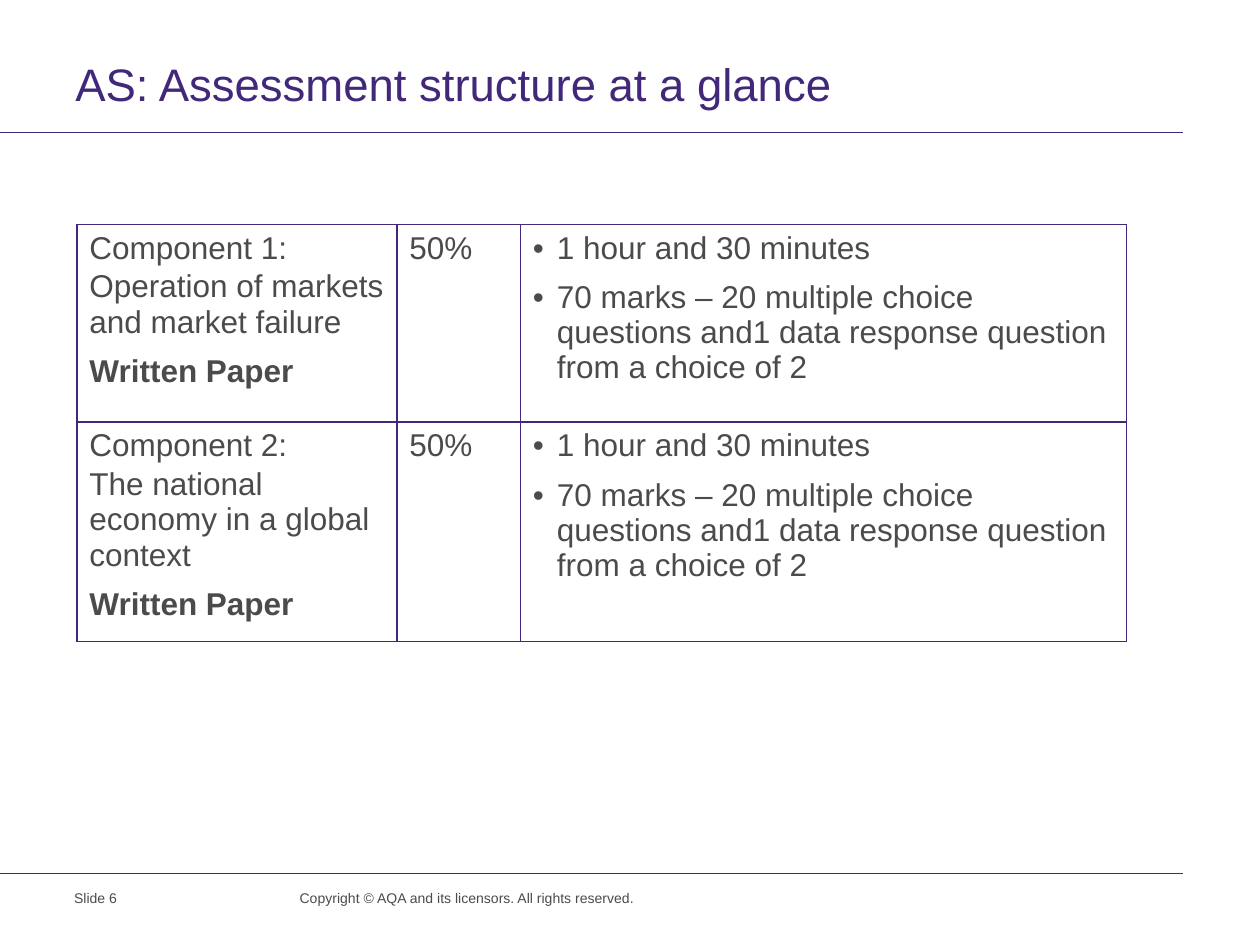
from dataclasses import dataclass
from lxml.etree import SubElement
from pptx import Presentation
from pptx.dml.color import RGBColor
from pptx.enum.shapes import MSO_CONNECTOR
from pptx.oxml import parse_xml
from pptx.oxml.ns import nsdecls, qn
from pptx.util import Inches, Pt


@dataclass(frozen=True)
class Theme:
    font: str = "Arial"
    purple: str = "412878"
    grey: str = "4B4B4B"
    title: int = 26
    title_leading: int = 28
    body: int = 18
    footer: int = 8
    rule: float = 0.6
    border: float = 1
    space_before: int = 2
    space_after: int = 6


THEME = Theme()

TITLE = "AS: Assessment structure at a glance"
FOOTERS = [  # text, left, width
    ("Slide 6", 0.49, 1.56),
    ("Copyright © AQA and its licensors. All rights reserved.", 2.28, 2.93),
]
COMPONENTS = [  # name, topic, weight
    ("Component 1:", "Operation of markets and market failure", "50%"),
    ("Component 2:", "The national economy in a global context", "50%"),
]
PAPER = "Written Paper"
EXAM_FORMAT = [
    "1 hour and 30 minutes",
    "70 marks – 20 multiple choice questions and1 data response question "
    "from a choice of 2",
]
RULE_TOPS, RULE_END = (1.05, 6.93), 9.39
FOOTER_TOP, FOOTER_HEIGHT = 7.01, 0.26
TABLE_LEFT, TABLE_TOP = 0.61, 1.78
COLUMN_WIDTHS, ROW_HEIGHT = (2.54, 0.98, 4.81), 1.57
BULLET_INDENT = 0.19


def add_run(p, text, size, color, bold=False):
    r = p.add_run()
    r.text = text
    font = r.font
    font.name, font.size, font.bold = THEME.font, Pt(size), bold
    font.color.rgb = RGBColor.from_string(color)


def add_text(slide, text, box, size, color):
    tf = slide.shapes.add_textbox(*map(Inches, box)).text_frame
    tf.word_wrap = True
    add_run(tf.paragraphs[0], text, size, color)
    return tf


def add_rule(slide, top):
    line = slide.shapes.add_connector(
        MSO_CONNECTOR.STRAIGHT, 0, Inches(top), Inches(RULE_END), Inches(top))
    line.line.color.rgb = RGBColor.from_string(THEME.purple)
    line.line.width = Pt(THEME.rule)
    SubElement(line._element.spPr, qn("a:effectLst"))


def add_bullet(p):
    pPr = p._p.get_or_add_pPr()
    pPr.set("marL", str(Inches(BULLET_INDENT)))
    pPr.set("indent", str(-Inches(BULLET_INDENT)))
    SubElement(pPr, qn("a:buFont"), typeface=THEME.font)
    SubElement(pPr, qn("a:buChar"), char="•")


def style_cell(cell):
    cell.fill.background()
    tcPr = cell._tc.get_or_add_tcPr()
    for i, side in enumerate("LRTB"):
        tcPr.insert(i, parse_xml(
            f'<a:ln{side} {nsdecls("a")} w="{Pt(THEME.border)}"><a:solidFill>'
            f'<a:srgbClr val="{THEME.purple}"/></a:solidFill></a:ln{side}>'))


def fill_cell(cell, lines, gap_after, bold=None, bullets=False):
    """Write one paragraph per line; gap_after and bold are line indexes."""
    style_cell(cell)
    tf = cell.text_frame
    for i, text in enumerate(lines):
        p = tf.add_paragraph() if i else tf.paragraphs[0]
        if bullets:
            add_bullet(p)
        if i:
            p.space_before = Pt(THEME.space_before)
        if i == gap_after:
            p.space_after = Pt(THEME.space_after)
        add_run(p, text, THEME.body, THEME.grey, i == bold)


def add_components_table(slide):
    table = slide.shapes.add_table(
        len(COMPONENTS), len(COLUMN_WIDTHS), Inches(TABLE_LEFT), Inches(TABLE_TOP),
        Inches(sum(COLUMN_WIDTHS)), Inches(ROW_HEIGHT * len(COMPONENTS))).table
    table.first_row = table.horz_banding = False
    for column, width in zip(table.columns, COLUMN_WIDTHS):
        column.width = Inches(width)
    for row, (name, topic, weight) in zip(table.rows, COMPONENTS):
        component, share, exam = row.cells
        fill_cell(component, [name, topic, PAPER], gap_after=1, bold=2)
        fill_cell(share, [weight], gap_after=None)
        fill_cell(exam, EXAM_FORMAT, gap_after=0, bullets=True)


def main():
    prs = Presentation()
    prs.slide_width, prs.slide_height = Inches(10), Inches(7.5)
    slide = prs.slides.add_slide(prs.slide_layouts[6])
    for top in RULE_TOPS:
        add_rule(slide, top)
    title = add_text(slide, TITLE, (0.5, 0.44, 9.5, 0.48), THEME.title, THEME.purple)
    title.paragraphs[0].line_spacing = Pt(THEME.title_leading)
    for text, left, width in FOOTERS:
        add_text(slide, text, (left, FOOTER_TOP, width, FOOTER_HEIGHT),
                 THEME.footer, THEME.grey)
    add_components_table(slide)
    prs.save("out.pptx")


if __name__ == "__main__":
    main()
